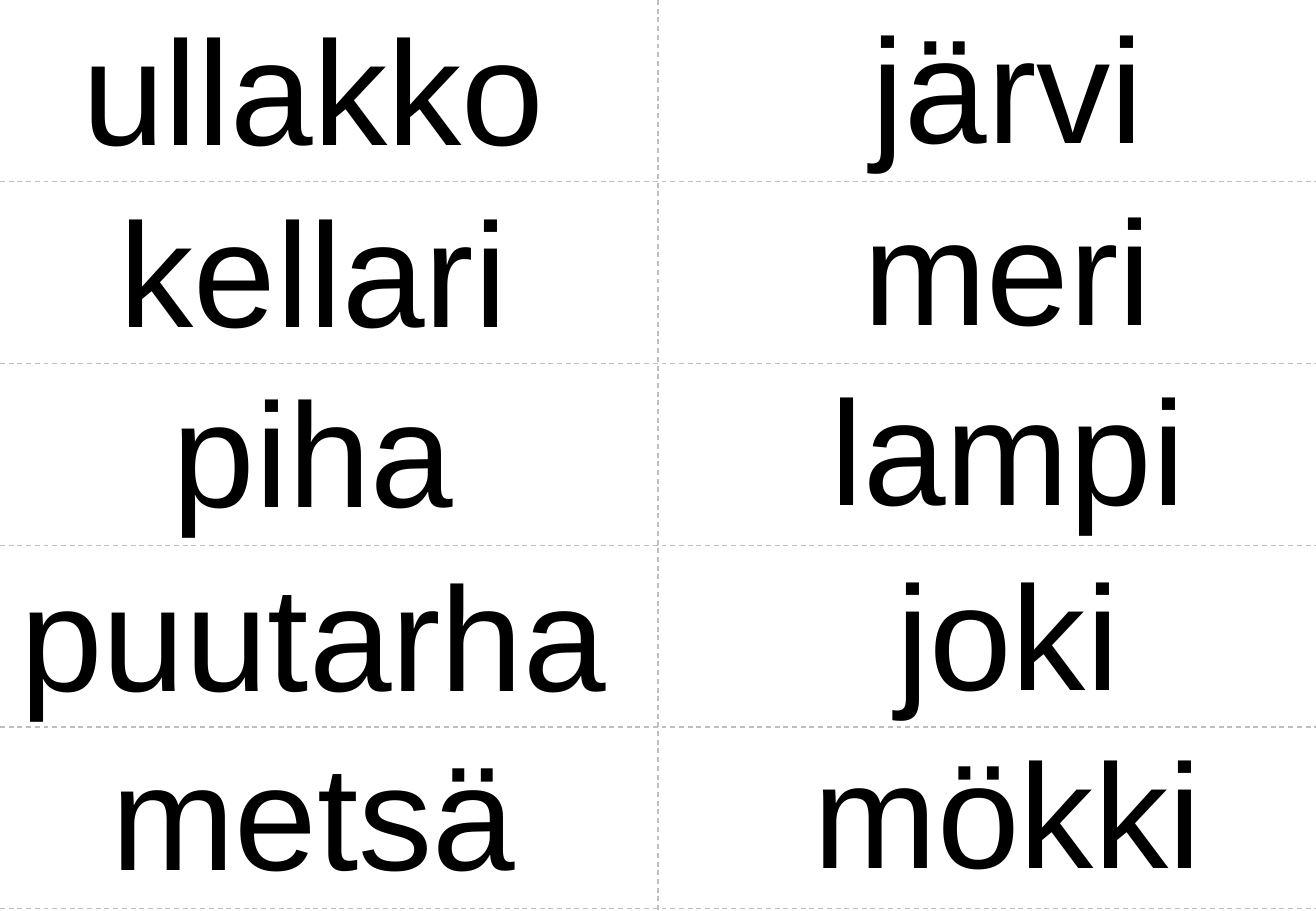
from dataclasses import dataclass

from lxml.etree import SubElement
from pptx import Presentation
from pptx.dml.color import RGBColor
from pptx.enum.dml import MSO_LINE
from pptx.enum.shapes import MSO_CONNECTOR
from pptx.enum.text import MSO_AUTO_SIZE, PP_ALIGN
from pptx.oxml.ns import qn
from pptx.slide import Slide
from pptx.util import Cm, Length, Pt

SLIDE_WIDTH = Pt(780)
SLIDE_HEIGHT = Pt(540)
CARD_HEIGHT = Cm(3.8)
WORD_HEIGHT = 3.76
INSET = 0.13
ROW_TOPS = (-0.2, 3.61, 7.37, 11.23, 14.96)


@dataclass(frozen=True)
class Word:
    text: str
    width: float


@dataclass(frozen=True)
class Column:
    center: float
    shift: float
    words: tuple[Word, ...]


COLUMNS = (
    Column(6.55, 0, (
        Word("ullakko", 9.96),
        Word("kellari", 8.41),
        Word("piha", 6.15),
        Word("puutarha", 12.55),
        Word("metsä", 8.74),
    )),
    Column(21.07, -0.03, (
        Word("järvi", 5.97),
        Word("meri", 6.32),
        Word("lampi", 7.7),
        Word("joki", 4.95),
        Word("mökki", 8.41),
    )),
)


def color(value: str) -> RGBColor:
    return RGBColor.from_string(value)


def add_text(slide: Slide, text: str, *, left: float, top: float, width: float,
             height: float, size: float = 88, font: str = "Arial",
             fill: str = "000000") -> None:
    shape = slide.shapes.add_textbox(Cm(left), Cm(top), Cm(width), Cm(height))
    frame = shape.text_frame
    frame.word_wrap = False
    frame.auto_size = MSO_AUTO_SIZE.SHAPE_TO_FIT_TEXT
    frame.margin_left = frame.margin_right = Cm(INSET)
    frame.margin_top = frame.margin_bottom = Cm(INSET)
    paragraph = frame.paragraphs[0]
    paragraph.alignment = PP_ALIGN.CENTER
    run = paragraph.add_run()
    run.text = text
    run.font.name = font
    run.font.size = Pt(size)
    run.font.color.rgb = color(fill)


def add_cut_line(slide: Slide, start: tuple[Length, Length],
                 end: tuple[Length, Length]) -> None:
    connector = slide.shapes.add_connector(MSO_CONNECTOR.STRAIGHT, *start, *end)
    connector.line.color.rgb = color("BFBFBF")
    connector.line.width = Pt(0.75)
    connector.line.dash_style = MSO_LINE.DASH
    SubElement(connector._element.spPr, qn("a:effectLst"))


def main() -> None:
    presentation = Presentation()
    presentation.slide_width = SLIDE_WIDTH
    presentation.slide_height = SLIDE_HEIGHT
    slide = presentation.slides.add_slide(
        presentation.slide_layouts.get_by_name("Blank"))

    for column in COLUMNS:
        for word, top in zip(column.words, ROW_TOPS):
            add_text(slide, word.text, left=column.center - word.width / 2,
                     top=top + column.shift, width=word.width,
                     height=WORD_HEIGHT)

    middle = Length(SLIDE_WIDTH // 2)
    add_cut_line(slide, (middle, Cm(0)), (middle, SLIDE_HEIGHT))
    for row in range(1, len(ROW_TOPS) + 1):
        bottom = Length(row * CARD_HEIGHT)
        add_cut_line(slide, (Cm(0), bottom), (SLIDE_WIDTH, bottom))

    presentation.save("out.pptx")


if __name__ == "__main__":
    main()
